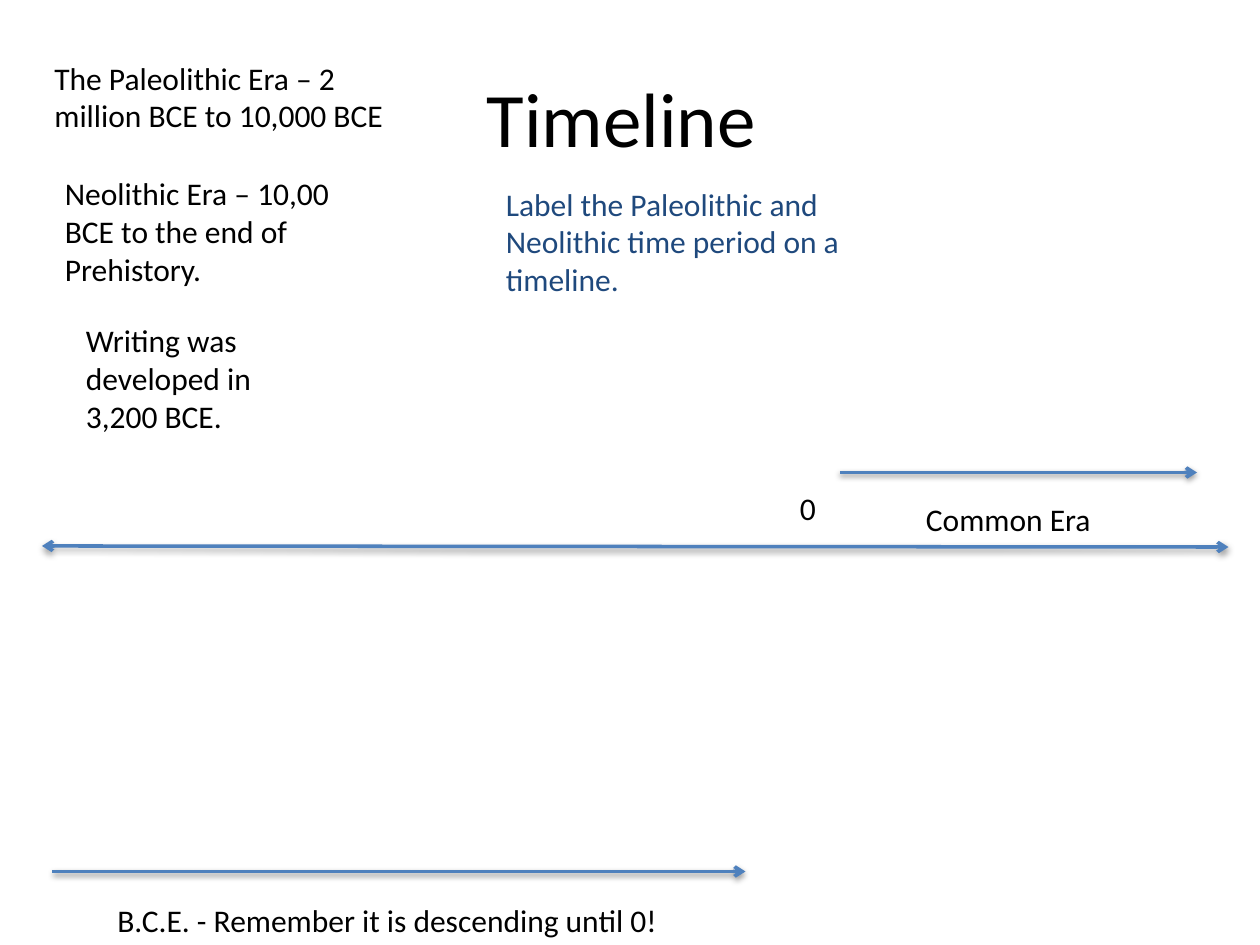
from lxml import etree
from pptx import Presentation
from pptx.dml.color import RGBColor
from pptx.enum.shapes import MSO_CONNECTOR
from pptx.enum.text import MSO_ANCHOR, MSO_AUTO_SIZE, PP_ALIGN
from pptx.oxml.ns import qn
from pptx.util import Inches, Pt

STRAIGHT = MSO_CONNECTOR.STRAIGHT
MIDDLE = MSO_ANCHOR.MIDDLE
GROW = MSO_AUTO_SIZE.SHAPE_TO_FIT_TEXT
CENTER = PP_ALIGN.CENTER

BLACK = RGBColor(0x00, 0x00, 0x00)
NAVY = RGBColor(0x1F, 0x49, 0x7D)
BLUE = RGBColor(0x4F, 0x81, 0xBD)

FONT = "Calibri"
CELLS_PER_INCH = 12
BLANK_LAYOUT = 6

NOTES = [
    ("The Paleolithic Era – 2 million BCE to 10,000 BCE", (4, 5, 36, 8.5), BLACK),
    ("Neolithic Era – 10,00 BCE to the end of Prehistory.", (5, 16, 32, 12.1), BLACK),
    ("Writing was developed in 3,200 BCE.", (7, 30, 23, 12.1), BLACK),
    ("Label the Paleolithic and Neolithic time period on a timeline.",
     (47, 17, 42, 12.1), NAVY),
    ("0", (75, 46, 5, 5), BLACK),
    ("Common Era", (87, 47, 22, 4.8), BLACK),
    ("B.C.E. - Remember it is descending until 0!", (10, 85.2, 59, 4.8), BLACK),
]

TIMELINE = (4, 52, 117, 52.1)
COMMON_ERA_SPAN = (80, 45, 114, 45)
BCE_SPAN = (5, 83, 71, 83)


def grid(*cells):
    return [Inches(cell / CELLS_PER_INCH) for cell in cells]


def add_text(slide, wording, area, color, size=18):
    box = slide.shapes.add_textbox(*grid(*area))
    frame = box.text_frame
    frame.word_wrap = True
    paragraph = frame.paragraphs[0]
    paragraph.text = wording
    paragraph.font.name = FONT
    paragraph.font.size = Pt(size)
    paragraph.font.color.rgb = color
    return frame


def add_title(slide, wording):
    frame = add_text(slide, wording, (6, 3.6, 108, 15), BLACK, 44)
    frame.vertical_anchor = MIDDLE
    frame.paragraphs[0].alignment = CENTER


def add_note(slide, wording, area, color):
    add_text(slide, wording, area, color).auto_size = GROW


def add_shadow(connector):
    effects = etree.SubElement(connector._element.spPr, qn("a:effectLst"))
    shadow = etree.SubElement(
        effects, qn("a:outerShdw"), blurRad="40000", dist="20000",
        dir="5400000", rotWithShape="0")
    tint = etree.SubElement(shadow, qn("a:srgbClr"), val=str(BLACK))
    etree.SubElement(tint, qn("a:alpha"), val="38000")


def add_arrow(slide, ends, arrowheads=("tailEnd",)):
    arrow = slide.shapes.add_connector(STRAIGHT, *grid(*ends))
    arrow.line.color.rgb = BLUE
    arrow.line.width = Pt(2)
    outline = arrow._element.spPr.find(qn("a:ln"))
    for arrowhead in arrowheads:
        etree.SubElement(outline, qn(f"a:{arrowhead}"), type="arrow")
    add_shadow(arrow)


def main():
    deck = Presentation()
    deck.slide_width, deck.slide_height = Inches(10), Inches(7.5)
    slide = deck.slides.add_slide(deck.slide_layouts[BLANK_LAYOUT])
    add_title(slide, "Timeline ")
    add_arrow(slide, TIMELINE, ("headEnd", "tailEnd"))
    for wording, area, color in NOTES:
        add_note(slide, wording, area, color)
    for span in (COMMON_ERA_SPAN, BCE_SPAN):
        add_arrow(slide, span)
    deck.save("out.pptx")


if __name__ == "__main__":
    main()
